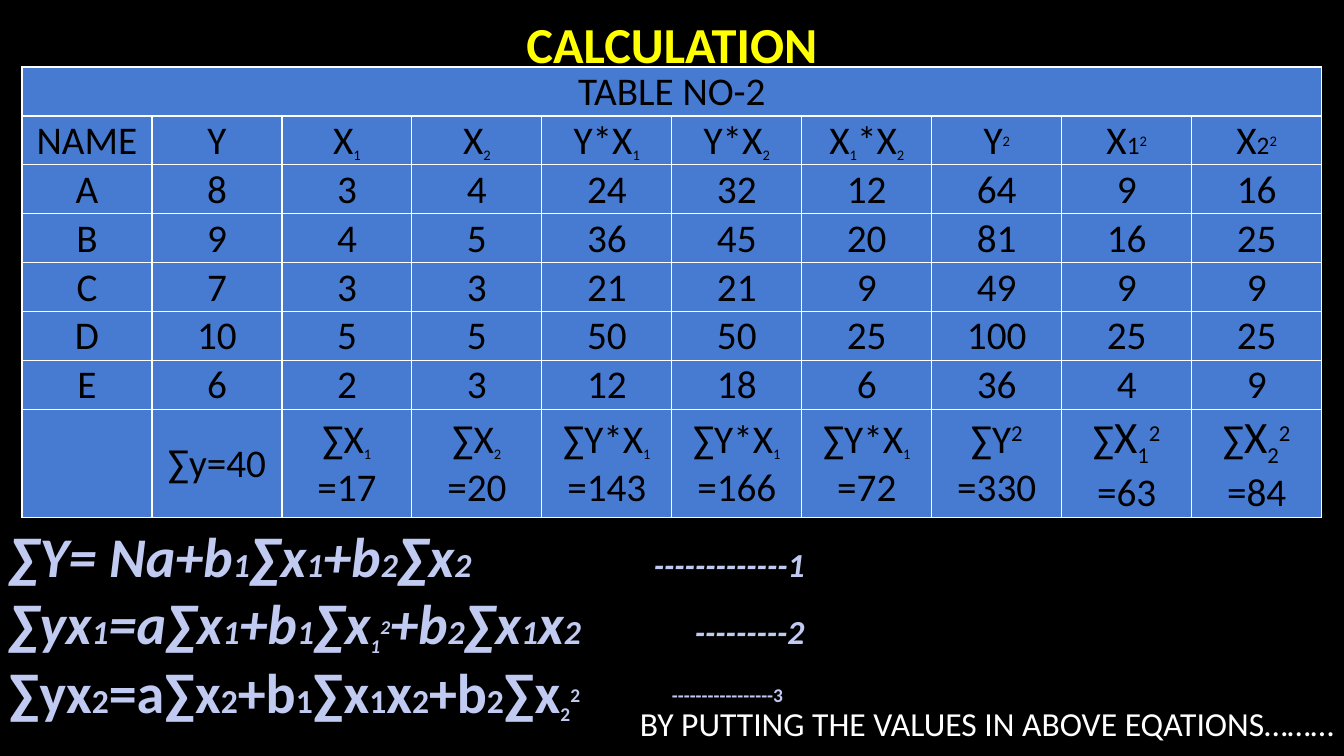
from dataclasses import dataclass
from typing import NamedTuple

from lxml import etree
from pptx import Presentation, util as u
from pptx.dml.color import RGBColor
from pptx.enum import text
from pptx.oxml import ns

EMU_PER_PX = 914400 / 100.8
BLACK, WHITE, YELLOW, BLUE, LILAC = "000000", "FFFFFF", "FFFF00", "477BD1", "C1CAF1"
SUB, SUPER = -25, 30
COLUMN_WIDTH, ROW_HEIGHT, TOTALS_HEIGHT = 130, 48, 108


class Span(NamedTuple):
    words: str
    size: int = 28
    base: int = 0


@dataclass
class Line:
    spans: list[Span]
    italic: bool = False
    tab: int = 0


@dataclass
class Box:
    left: int
    top: int
    width: int
    height: int
    lines: list[Line]
    color: str
    align: text.PP_ALIGN
    bold: bool = False


def px(length: int) -> u.Emu:
    return u.Emu(round(length * EMU_PER_PX))


def rgb(code: str) -> RGBColor:
    return RGBColor.from_string(code)


def write(frame, lines: list[Line], color: str, align: text.PP_ALIGN, bold: bool = False) -> None:
    for index, line in enumerate(lines):
        para = frame.add_paragraph() if index else frame.paragraphs[0]
        para.alignment = align
        if line.tab:
            stops = etree.SubElement(para._p.get_or_add_pPr(), ns.qn("a:tabLst"))
            etree.SubElement(stops, ns.qn("a:tab"), pos=str(px(line.tab)), algn="l")
        for part in line.spans:
            span = para.add_run()
            span.text = part.words
            font = span.font
            font.name, font.size = "Calibri", u.Pt(part.size)
            font.bold, font.italic = bold, line.italic
            font.color.rgb = rgb(color)
            if part.base:
                span._r.get_or_add_rPr().set("baseline", str(part.base * 1000))


def draw_box(page, box: Box) -> None:
    frame = page.shapes.add_textbox(*map(px, (box.left, box.top, box.width, box.height))).text_frame
    frame.word_wrap = True
    frame.vertical_anchor = text.MSO_ANCHOR.MIDDLE
    write(frame, box.lines, box.color, box.align, box.bold)


def add_borders(cell) -> None:
    properties = cell._tc.get_or_add_tcPr()
    for index, side in enumerate(("lnL", "lnR", "lnT", "lnB")):
        border = etree.Element(ns.qn(f"a:{side}"), w=str(u.Pt(1)))
        fill = etree.SubElement(border, ns.qn("a:solidFill"))
        etree.SubElement(fill, ns.qn("a:srgbClr"), val=WHITE)
        properties.insert(index, border)


def draw_table(page, left: int, top: int, rows: list[list[list[Line]]]) -> None:
    columns = len(rows[1])
    heights = [ROW_HEIGHT] * (len(rows) - 1) + [TOTALS_HEIGHT]
    table = page.shapes.add_table(len(rows), columns, px(left), px(top),
                                  px(columns * COLUMN_WIDTH), px(sum(heights))).table
    table.first_row = table.horz_banding = False
    for column in table.columns:
        column.width = px(COLUMN_WIDTH)
    for row, height in zip(table.rows, heights):
        row.height = px(height)
    for cell in table.iter_cells():
        cell.fill.solid()
        cell.fill.fore_color.rgb = rgb(BLUE)
        cell.vertical_anchor = text.MSO_ANCHOR.MIDDLE
        cell.margin_left = cell.margin_right = cell.margin_top = px(1)
        cell.margin_bottom = 0
        add_borders(cell)
    table.cell(0, 0).merge(table.cell(0, columns - 1))
    for r, row in enumerate(rows):
        for c, lines in enumerate(row):
            write(table.cell(r, c).text_frame, lines, BLACK, text.PP_ALIGN.CENTER)


def plain(words: str, size: int = 28) -> list[Line]:
    return [Line([Span(words, size)])]


def indexed(*pairs: str) -> list[Span]:
    """Letters followed by a one-character subscript, for each entry."""
    return [span for pair in pairs for span in (Span(pair[:-1]), Span(pair[-1], 18, SUB))]


def squared(index: str) -> list[Line]:
    return [Line([Span("X"), Span(index, 18), Span("2", 18, SUPER)])]


def total(spans: list[Span], value: int) -> list[Line]:
    return [Line(spans), *plain(f"={value}")]


def squared_sum(index: str) -> list[Span]:
    return [Span("∑"), Span("X", 32), Span(index, 28, SUB), Span("2", 28, SUPER)]


def terms(marked: str) -> list[Span]:
    """Large and small pieces in turn, separated by bars."""
    return [Span(piece, 24 if i % 2 else 40) for i, piece in enumerate(marked.split("|"))]


HEADINGS = [
    plain("NAME"), plain("Y"),
    *([Line(indexed(*pairs))] for pairs in (["X1"], ["X2"], ["Y*X1"], ["Y*X2"], ["X1", "*X2"])),
    [Line([Span("Y"), Span("2", 18, SUPER)])], squared("1"), squared("2"),
]
OBSERVATIONS = [
    ("A", 8, 3, 4), ("B", 9, 4, 5), ("C", 7, 3, 3), ("D", 10, 5, 5), ("E", 6, 2, 3),
]
TOTALS = [
    [], plain("∑y=40"),
    total(indexed("∑X1"), 17), total(indexed("∑X2"), 20),
    *(total(indexed("∑Y*X1"), value) for value in (143, 166, 72)),
    total([Span("∑Y"), Span("2", 28, SUPER)], 330),
    total(squared_sum("1"), 63), total(squared_sum("2"), 84),
]
EQUATIONS = [
    Line(terms("∑Y= Na+b|1|∑x|1|+b|2|∑x|2\t-------------1"), True, 645),
    Line([*terms("∑yx|1|=a∑x|1|+b|1|∑x"), Span("1", 24, SUB), Span("2", 24, SUPER),
          *terms("+b|2|∑x|1|x|2\t---------2")], True, 686),
    Line([*terms("∑yx|2|=a∑x|2|+b|1|∑x|1|x|2|+b|2|∑x"), Span("2", 24, SUB),
          Span("2\t-----------------3", 24, SUPER)], False, 663),
]
BOXES = [
    Box(0, 9, 1344, 68, plain("CALCULATION", 36), YELLOW, text.PP_ALIGN.CENTER, True),
    Box(-1, 531, 836, 185, EQUATIONS, LILAC, text.PP_ALIGN.LEFT, True),
    Box(547, 700, 797, 47, plain("BY PUTTING THE VALUES IN ABOVE EQATIONS………", 24),
        WHITE, text.PP_ALIGN.RIGHT),
]


def main() -> None:
    deck = Presentation()
    deck.slide_width, deck.slide_height = px(1344), px(756)
    page = deck.slides.add_slide(deck.slide_layouts[6])
    page.background.fill.solid()
    page.background.fill.fore_color.rgb = rgb(BLACK)
    body = [
        [plain(str(value)) for value in
         (name, y, x1, x2, y * x1, y * x2, x1 * x2, y * y, x1 * x1, x2 * x2)]
        for name, y, x1, x2 in OBSERVATIONS
    ]
    draw_table(page, 22, 67, [[plain("TABLE NO-2")], HEADINGS, *body, TOTALS])
    for box in BOXES:
        draw_box(page, box)
    deck.save("out.pptx")


if __name__ == "__main__":
    main()
